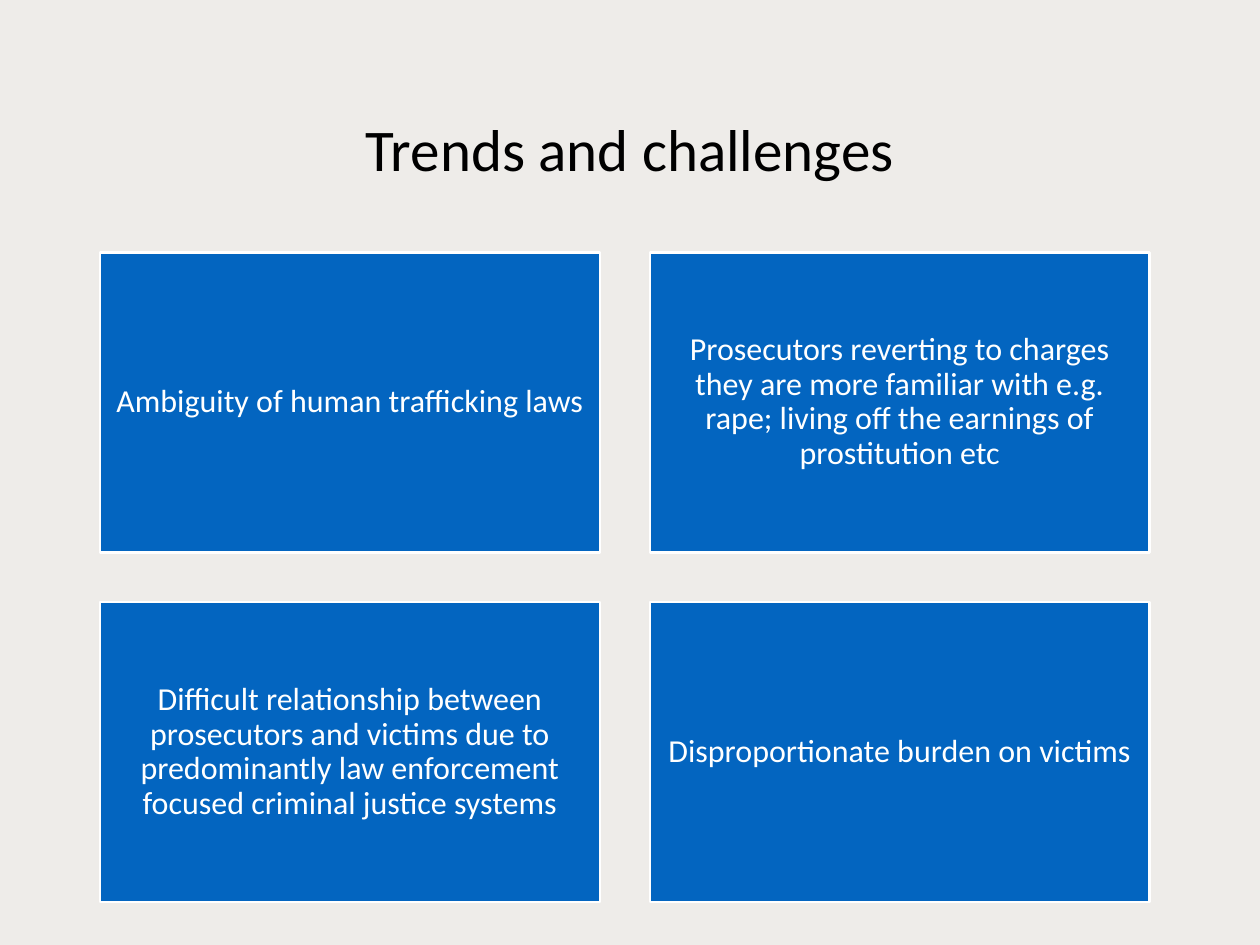
import pptx
import pptx.dml.color
import pptx.enum.shapes
import pptx.enum.text
import pptx.util

Cm = pptx.util.Cm
Pt = pptx.util.Pt
RGBColor = pptx.dml.color.RGBColor

BACKGROUND = RGBColor(0xEE, 0xEC, 0xE9)
BLUE = RGBColor(0x03, 0x65, 0xC0)
WHITE = RGBColor(0xFF, 0xFF, 0xFF)
BLACK = RGBColor(0x00, 0x00, 0x00)

CHALLENGES = [
    "Ambiguity of human trafficking laws",
    "Prosecutors reverting to charges they are more familiar with e.g. rape; "
    "living off the earnings of prostitution etc",
    "Difficult relationship between prosecutors and victims due to "
    "predominantly law enforcement focused criminal justice systems",
    "Disproportionate burden on victims",
]
COLUMNS = 2
LEFT, TOP = 2.87, 7.24
WIDTH, HEIGHT = 14.33, 8.6
GAP = 1.43


def write(shape, text, size, color, inset):
    frame = shape.text_frame
    frame.text = text
    frame.word_wrap = True
    frame.vertical_anchor = pptx.enum.text.MSO_ANCHOR.MIDDLE
    frame.margin_left = frame.margin_right = Cm(inset)
    frame.margin_top = frame.margin_bottom = Cm(inset)
    paragraph = frame.paragraphs[0]
    paragraph.alignment = pptx.enum.text.PP_ALIGN.CENTER
    font = paragraph.runs[0].font
    font.name = "Calibri"
    font.size = Pt(size)
    font.color.rgb = color
    return paragraph


presentation = pptx.Presentation()
presentation.slide_width = Cm(36.12)
presentation.slide_height = Cm(27.1)
slide = presentation.slides.add_slide(presentation.slide_layouts[6])
slide.background.fill.solid()
slide.background.fill.fore_color.rgb = BACKGROUND

heading = slide.shapes.add_textbox(Cm(2.64), Cm(1.24), Cm(30.84), Cm(6))
write(heading, "Trends and challenges", 48, BLACK, 0)

for index, challenge in enumerate(CHALLENGES):
    row, column = divmod(index, COLUMNS)
    card = slide.shapes.add_shape(
        pptx.enum.shapes.MSO_SHAPE.RECTANGLE,
        Cm(LEFT + column * (WIDTH + GAP)),
        Cm(TOP + row * (HEIGHT + GAP)),
        Cm(WIDTH),
        Cm(HEIGHT),
    )
    card.shadow.inherit = False
    card.fill.solid()
    card.fill.fore_color.rgb = BLUE
    card.line.color.rgb = WHITE
    card.line.width = Pt(2)
    write(card, challenge, 26, WHITE, 0.28).line_spacing = 0.9

presentation.save("out.pptx")
